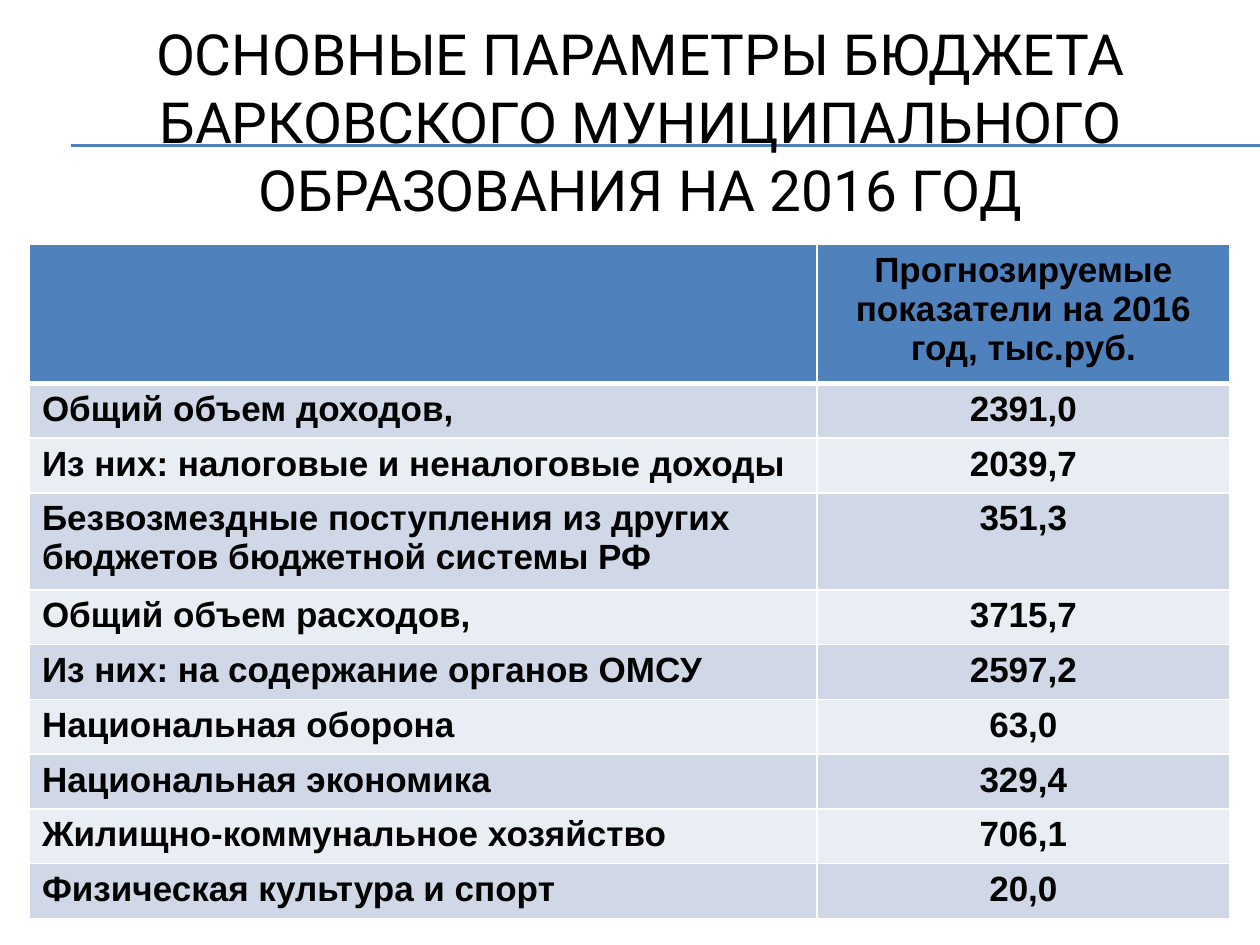
from lxml import etree
from pptx import Presentation
from pptx import util as u
from pptx.dml.color import RGBColor
from pptx.enum import shapes, text
from pptx.oxml.ns import qn

HEX = {"ink": "000000", "head": "4F81BD", "odd": "D0D8E8",
       "even": "E9EDF4", "edge": "FFFFFF"}
ROWS = [
    ("", "Прогнозируемые показатели на 2016 год, тыс.руб."),
    ("Общий объем доходов,", "2391,0"),
    ("Из них: налоговые и неналоговые доходы", "2039,7"),
    ("Безвозмездные поступления из других бюджетов бюджетной системы РФ", "351,3"),
    ("Общий объем расходов,", "3715,7"),
    ("Из них: на содержание органов ОМСУ", "2597,2"),
    ("Национальная оборона", "63,0"),
    ("Национальная экономика", "329,4"),
    ("Жилищно-коммунальное хозяйство", "706,1"),
    ("Физическая культура и спорт", "20,0"),
]
ROW, HEAD, TALL = 31.3, 79, 55.4
LEFT, MID = text.PP_ALIGN.LEFT, text.PP_ALIGN.CENTER


def tint(name):
    return RGBColor.from_string(HEX[name])


def write(frame, words, size=20, font="Arial", bold=False, align=LEFT):
    para = frame.paragraphs[0]
    para.alignment = align
    para.font.size = u.Pt(size)
    if not words:
        return
    run = para.add_run()
    run.text = words
    run.font.size, run.font.name, run.font.bold = u.Pt(size), font, bold
    run.font.color.rgb = tint("ink")


def edge(cell, **sides):
    """Draw cell borders; sides are given as L, R, T, B widths in points."""
    props = cell._tc.get_or_add_tcPr()
    for side, width in sides.items():
        line = etree.SubElement(props, qn(f"a:ln{side}"), w=str(u.Pt(width)))
        fill = etree.SubElement(line, qn("a:solidFill"))
        etree.SubElement(fill, qn("a:srgbClr"), val=HEX["edge"])


class Deck:
    def __init__(self, wide, high):
        self.prs = Presentation()
        self.prs.slide_width, self.prs.slide_height = u.Pt(wide), u.Pt(high)
        self.page = self.prs.slides.add_slide(self.prs.slide_layouts[6])

    def rule(self, left, right, y):
        line = self.page.shapes.add_connector(
            shapes.MSO_CONNECTOR.STRAIGHT, u.Pt(left), u.Pt(y), u.Pt(right), u.Pt(y))
        line.line.color.rgb = tint("head")
        line.line.width = u.Pt(0.75)
        etree.SubElement(line._element.spPr, qn("a:effectLst"))

    def title(self, words, *area):
        box = self.page.shapes.add_textbox(*map(u.Pt, area))
        box.text_frame.word_wrap = True
        box.text_frame.vertical_anchor = text.MSO_ANCHOR.MIDDLE
        write(box.text_frame, words, size=32.4, font="Roboto", align=MID)

    def table(self, rows, left, top, widths, heights):
        area = map(u.Pt, (left, top, sum(widths), sum(heights)))
        grid = self.page.shapes.add_table(len(rows), len(widths), *area).table
        for col, width in zip(grid.columns, widths):
            col.width = u.Pt(width)
        for r, (row, high) in enumerate(zip(rows, heights)):
            grid.rows[r].height = u.Pt(high)
            for c, words in enumerate(row):
                cell = grid.cell(r, c)
                edge(cell, L=1, R=1, T=3 if r == 1 else 1, B=3 if r == 0 else 1)
                cell.fill.solid()
                cell.fill.fore_color.rgb = tint(
                    "head" if r == 0 else "odd" if r % 2 else "even")
                write(cell.text_frame, words, bold=True, align=MID if c else LEFT)


def main():
    deck = Deck(720, 540)
    for y in (82.8, 83.5):
        deck.rule(40.5, 720, y)
    deck.title("ОСНОВНЫЕ ПАРАМЕТРЫ БЮДЖЕТА БАРКОВСКОГО МУНИЦИПАЛЬНОГО "
               "ОБРАЗОВАНИЯ НА 2016 ГОД", 24, 36, 684, 66)
    heights = [HEAD, ROW, ROW, TALL] + [ROW] * 6
    deck.table(ROWS, 16.8, 139.8, (450, 236), heights)
    deck.prs.save("out.pptx")


if __name__ == "__main__":
    main()
